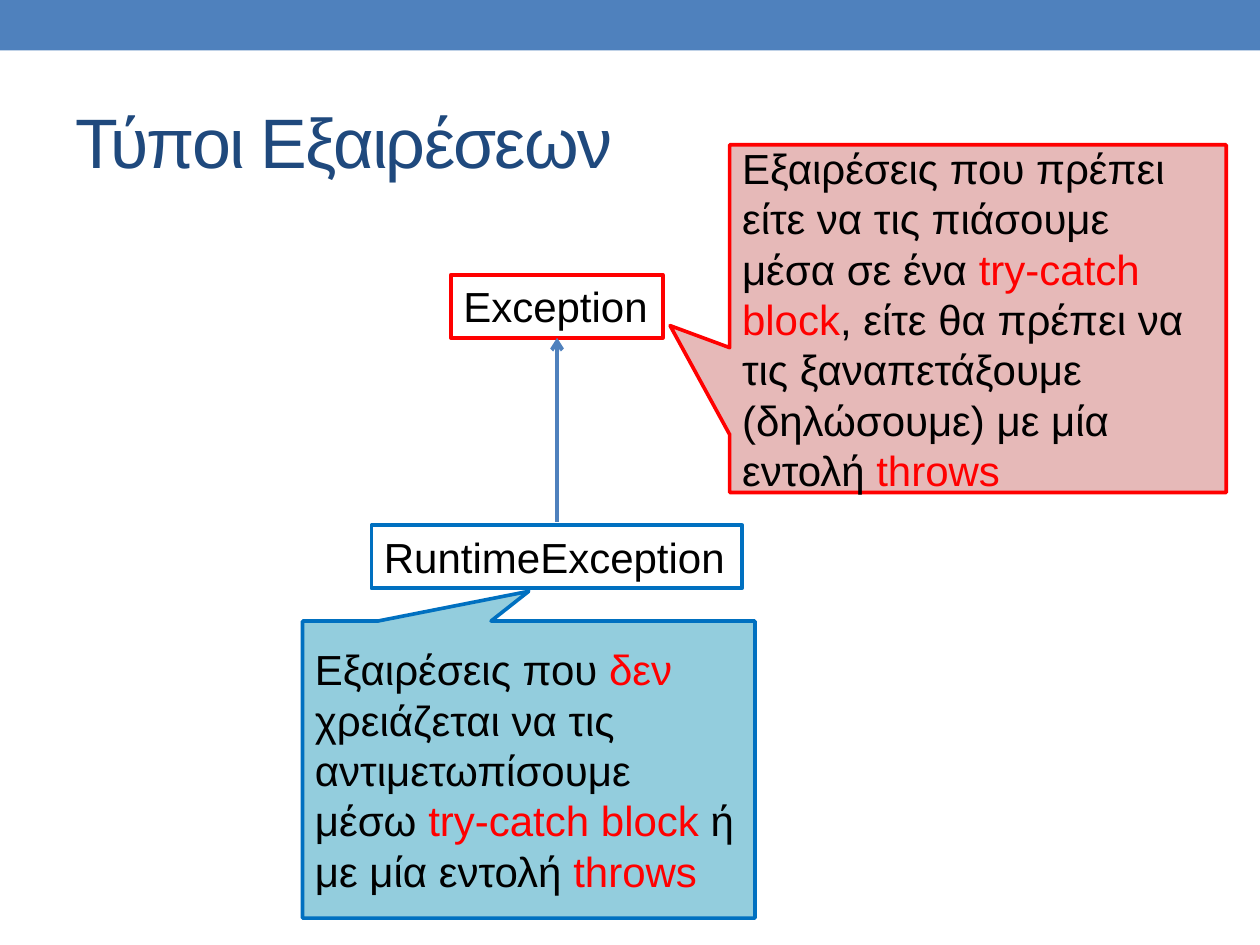
from lxml.etree import SubElement
from pptx import Presentation
from pptx.dml.color import RGBColor
from pptx.enum.shapes import MSO_CONNECTOR as Link, MSO_SHAPE as Form
from pptx.enum.text import MSO_ANCHOR as Anchor, MSO_AUTO_SIZE as Fit, PP_ALIGN as Align
from pptx.oxml.ns import qn
from pptx.util import Cm, Pt

BLUE = RGBColor(0x4F, 0x81, 0xBD)
NAVY = RGBColor(0x1F, 0x49, 0x7D)
AZURE = RGBColor(0x00, 0x70, 0xC0)
TEAL = RGBColor(0x93, 0xCD, 0xDD)
PINK = RGBColor(0xE6, 0xB9, 0xB8)
RED = RGBColor(0xFF, 0x00, 0x00)
BLACK = RGBColor(0x00, 0x00, 0x00)


class Board:
    font = "Arial"
    size = 24
    edge = 2.25
    rim = 2.08

    def __init__(self, slide):
        self.slide = slide

    def shape(self, form, area, fill=None, line=None, width=edge):
        item = self.slide.shapes.add_shape(form, *map(Cm, area))
        item.shadow.inherit = False
        if fill is None:
            item.fill.background()
        else:
            item.fill.solid()
            item.fill.fore_color.rgb = fill
        if line is None:
            item.line.fill.background()
        else:
            item.line.color.rgb = line
            item.line.width = Pt(width)
        return item

    def label(self, frame, runs, size=size):
        """Fill the frame with (text, colour) runs and return them."""
        para = frame.paragraphs[0]
        para.alignment = Align.LEFT
        made = []
        for text, color in runs:
            run = para.add_run()
            run.text = text
            run.font.name = self.font
            run.font.size = Pt(size)
            run.font.color.rgb = color
            made.append(run)
        return made

    def bar(self, area):
        self.shape(Form.RECTANGLE, area, BLUE)

    def title(self, text, area):
        frame = self.slide.shapes.add_textbox(*map(Cm, area)).text_frame
        frame.word_wrap = True
        frame.vertical_anchor = Anchor.MIDDLE
        for run in self.label(frame, [(text, NAVY)], 40):
            run.font._element.set("spc", "-100")

    def box(self, text, area, line):
        frame = self.shape(Form.RECTANGLE, area, line=line).text_frame
        frame.word_wrap = False
        frame.auto_size = Fit.SHAPE_TO_FIT_TEXT
        frame.vertical_anchor = Anchor.TOP
        self.label(frame, [(text, BLACK)])

    def callout(self, runs, area, tip, fill, line):
        """Draw a note; tip is the offset from its centre, as shares of its size."""
        item = self.shape(Form.RECTANGULAR_CALLOUT, area, fill, line, self.rim)
        item.adjustments[0], item.adjustments[1] = tip
        frame = item.text_frame
        frame.word_wrap = True
        frame.vertical_anchor = Anchor.MIDDLE
        self.label(frame, runs)

    def arrow(self, start, end):
        link = self.slide.shapes.add_connector(
            Link.STRAIGHT, *map(Cm, start + end))
        link.line.color.rgb = BLUE
        link.line.width = Pt(self.edge)
        SubElement(link.line._get_or_add_ln(), qn("a:tailEnd"), type="arrow")
        SubElement(link._element.spPr, qn("a:effectLst"))


def main():
    deck = Presentation()
    deck.slide_width, deck.slide_height = Cm(25.4), Cm(19.05)
    board = Board(deck.slides.add_slide(deck.slide_layouts[6]))

    board.bar((0, 0, 25.4, 1.02))
    board.title("Τύποι Εξαιρέσεων", (1.27, 1.47, 22.86, 2.74))

    board.box("Exception", (9.09, 5.54, 4.27, 1.27), RED)
    board.arrow((11.23, 10.52), (11.23, 6.81))
    board.callout([
        ("Εξαιρέσεις που πρέπει είτε να τις πιάσουμε μέσα σε ένα ", BLACK),
        ("try-catch block", RED),
        (", είτε θα πρέπει να τις ξαναπετάξουμε (δηλώσουμε) με μία εντολή ", BLACK),
        ("throws", RED),
    ], (14.71, 2.92, 10.01, 7.01), (-0.62, 0.02), PINK, RED)

    board.box("RuntimeException", (7.49, 10.59, 7.47, 1.27), AZURE)
    board.callout([
        ("Εξαιρέσεις που ", BLACK),
        ("δεν", RED),
        (" χρειάζεται να τις αντιμετωπίσουμε μέσω ", BLACK),
        ("try-catch block", RED),
        (" ή με μία εντολή ", BLACK),
        ("throws", RED),
    ], (6.1, 12.52, 9.12, 5.99), (0, -0.6), TEAL, AZURE)

    deck.save("out.pptx")


if __name__ == "__main__":
    main()
